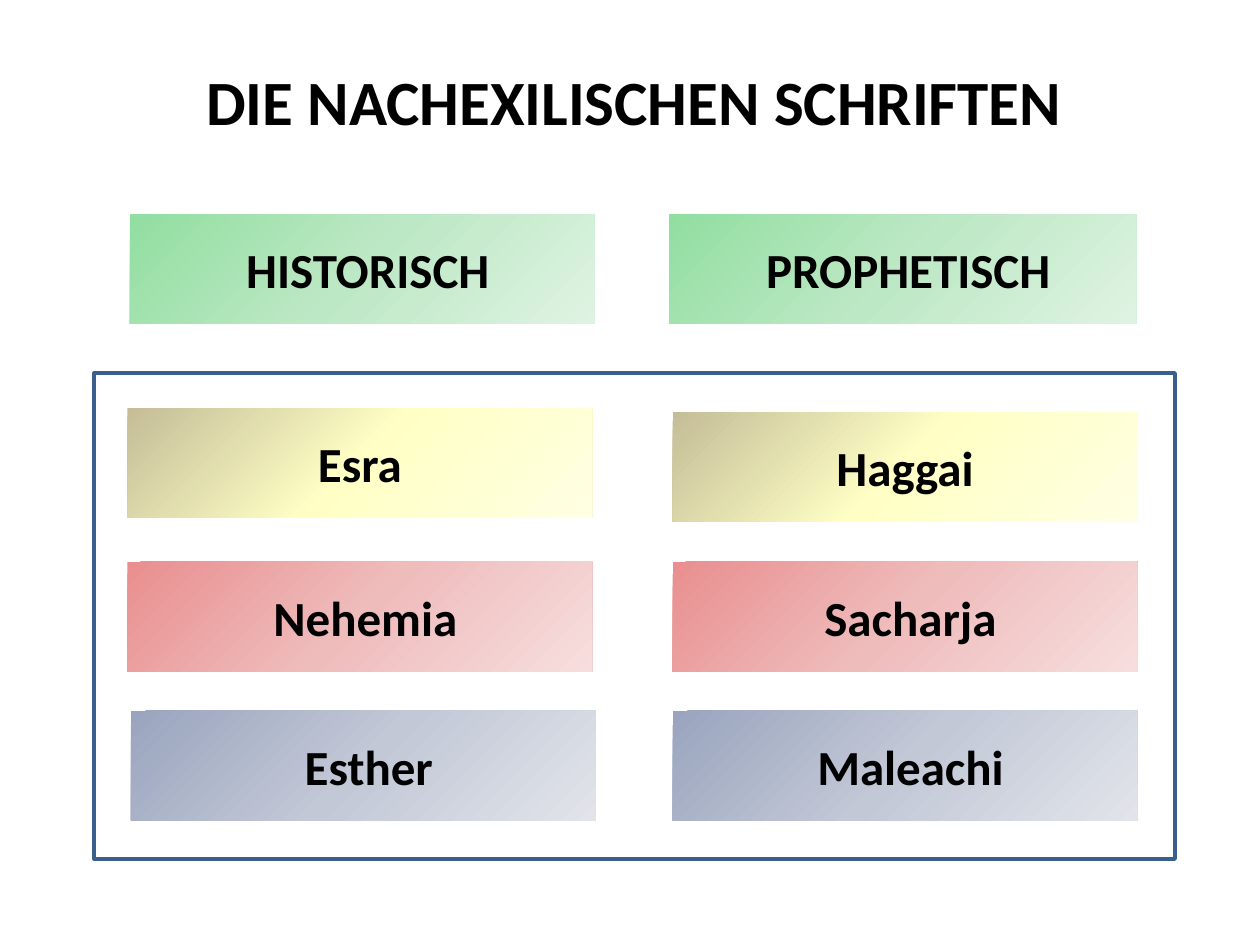
from copy import deepcopy
from dataclasses import dataclass

from pptx import Presentation
from pptx.dml.color import RGBColor
from pptx.enum.shapes import MSO_SHAPE
from pptx.enum.text import MSO_ANCHOR, MSO_AUTO_SIZE, PP_ALIGN
from pptx.oxml.ns import qn
from pptx.util import Cm, Pt

RECT = MSO_SHAPE.RECTANGLE
CENTER = PP_ALIGN.CENTER
TOP, MIDDLE = MSO_ANCHOR.TOP, MSO_ANCHOR.MIDDLE
FIXED, GROW = MSO_AUTO_SIZE.NONE, MSO_AUTO_SIZE.SHAPE_TO_FIT_TEXT

BLACK = RGBColor(0x00, 0x00, 0x00)
WHITE = RGBColor(0xFF, 0xFF, 0xFF)
BLUE = RGBColor(0x3A, 0x5F, 0x8C)
GREENS = (RGBColor(0x91, 0xDE, 0xA0), RGBColor(0xBD, 0xE8, 0xC5),
          RGBColor(0xDF, 0xF3, 0xE3))
TANS = (RGBColor(0xC4, 0xBD, 0x97), RGBColor(0xFF, 0xFF, 0xC5),
        RGBColor(0xFF, 0xFF, 0xE3))
REDS = (RGBColor(0xE9, 0x8F, 0x8F), RGBColor(0xEF, 0xBC, 0xBC),
        RGBColor(0xF7, 0xDE, 0xDE))
GREYS = (RGBColor(0x9A, 0xA4, 0xBE), RGBColor(0xC2, 0xC8, 0xD6),
         RGBColor(0xE2, 0xE4, 0xEA))


@dataclass
class Card:
    text: str
    left: float
    top: float
    tones: tuple
    width: float = 9.37
    height: float = 2.21
    indent: float = 0.22  # shifts the centred word slightly right


CARDS = [
    Card("HISTORISCH", 2.62, 4.32, GREENS),
    Card("PROPHETISCH", 13.49, 4.32, GREENS, width=9.42),
    Card("Esra", 2.57, 8.23, TANS, indent=0),
    Card("Haggai", 13.56, 8.31, TANS, indent=0),
    Card("Nehemia", 2.57, 11.33, REDS),
    Card("Sacharja", 13.56, 11.33, REDS),
    Card("Esther", 2.64, 14.33, GREYS),
    Card("Maleachi", 13.56, 14.33, GREYS),
]


def write(shape, text: str, *, size: float, anchor, fit,
          left: float = 0.25, pad: float = 0.13) -> None:
    frame = shape.text_frame
    frame.word_wrap = True
    frame.auto_size = fit
    frame.vertical_anchor = anchor
    frame.margin_left, frame.margin_right = Cm(left), Cm(0.25)
    frame.margin_top = frame.margin_bottom = Cm(pad)
    para = frame.paragraphs[0]
    para.alignment = CENTER
    run = para.add_run()
    run.text = text
    font = run.font
    font.name, font.size, font.bold = "Calibri", Pt(size), True
    font.color.rgb = BLACK


def shade(shape, tones: tuple) -> None:
    fill = shape.fill
    fill.gradient()
    fill.gradient_angle = 315
    # Add a middle stop between the two default ones
    first = next(shape._element.spPr.iter(qn("a:gs")))
    middle = deepcopy(first)
    middle.set("pos", "50000")
    first.addnext(middle)
    for stop, tone in zip(fill.gradient_stops, tones):
        stop.color.rgb = tone


def add_box(slide, left: float, top: float, width: float, height: float):
    box = slide.shapes.add_shape(RECT, Cm(left), Cm(top), Cm(width), Cm(height))
    box.shadow.inherit = False
    return box


def add_card(slide, card: Card) -> None:
    box = add_box(slide, card.left, card.top, card.width, card.height)
    box.line.fill.background()
    shade(box, card.tones)
    write(box, card.text, size=28, anchor=MIDDLE, fit=GROW,
          left=0.25 + card.indent, pad=0.5)


def main() -> None:
    deck = Presentation()
    deck.slide_width, deck.slide_height = Cm(25.4), Cm(19.05)
    slide = deck.slides.add_slide(deck.slide_layouts[5])

    # Title
    title = slide.shapes.title
    title.left, title.top = Cm(1.09), Cm(1.12)
    title.width, title.height = Cm(23.39), Cm(1.6)
    title.fill.solid()
    title.fill.fore_color.rgb = WHITE
    write(title, "DIE NACHEXILISCHEN SCHRIFTEN", size=36, anchor=TOP, fit=FIXED)

    # Headings and books
    for card in CARDS:
        add_card(slide, card)

    # Frame around the books
    frame = add_box(slide, 1.9, 7.52, 21.79, 9.8)
    frame.fill.background()
    frame.line.color.rgb = BLUE
    frame.line.width = Pt(2)

    deck.save("out.pptx")


if __name__ == "__main__":
    main()
